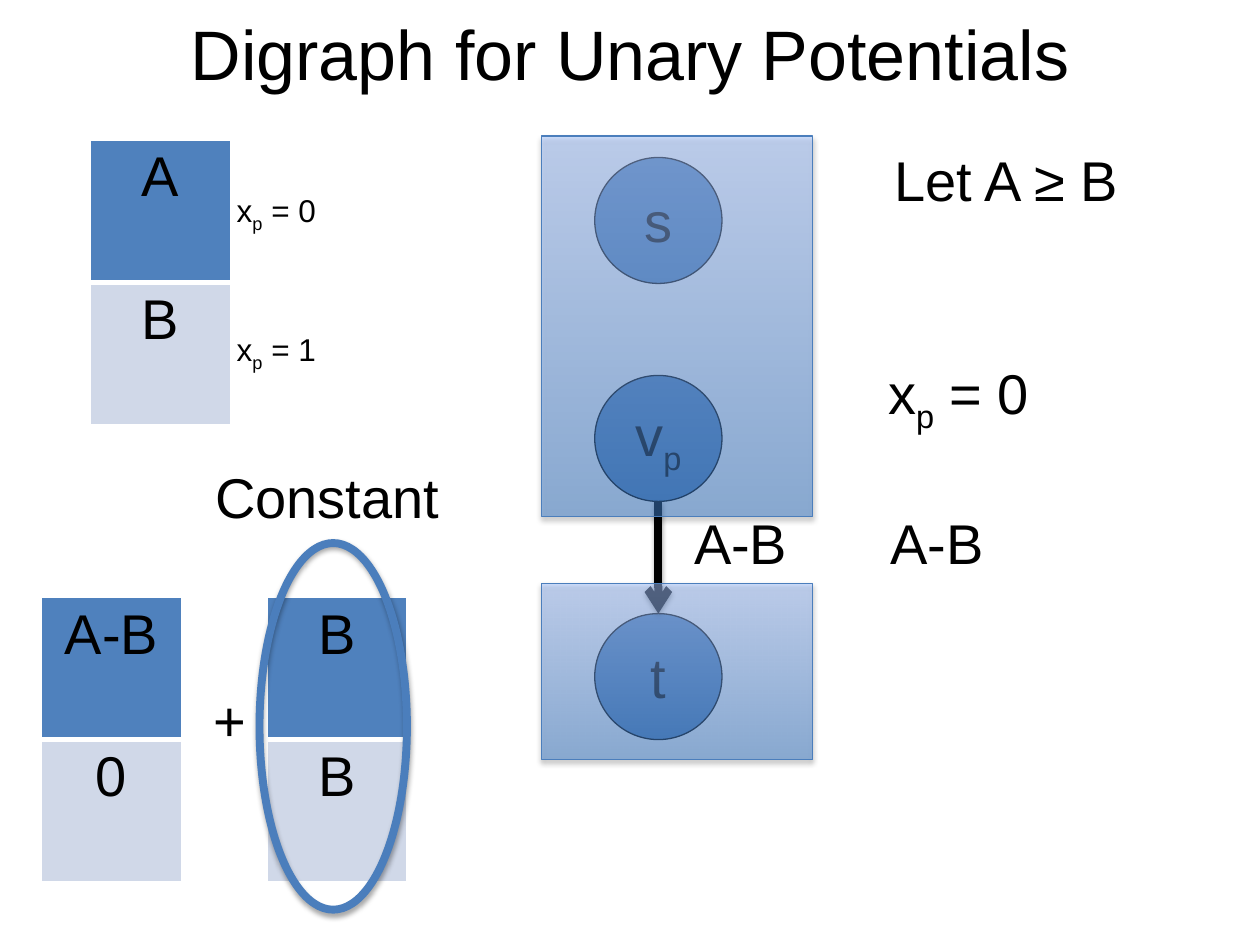
import lxml.etree
import pptx
import pptx.dml.color
import pptx.enum.dml
import pptx.enum.shapes
import pptx.enum.text
import pptx.oxml
import pptx.oxml.ns
import pptx.util

RGBColor = pptx.dml.color.RGBColor
BLACK = RGBColor(0x00, 0x00, 0x00)
WHITE = RGBColor(0xFF, 0xFF, 0xFF)
BLUE = RGBColor(0x4F, 0x81, 0xBD)
PALE = RGBColor(0xD0, 0xD8, 0xE8)
OUTLINE = RGBColor(0x4B, 0x7E, 0xBC)
VEIL_LOW = RGBColor(0x3F, 0x80, 0xCE)
VEIL_HIGH = RGBColor(0xA4, 0xC4, 0xFF)

SHAPES = pptx.enum.shapes.MSO_SHAPE
ALIGN = pptx.enum.text.PP_ALIGN
ANCHOR = pptx.enum.text.MSO_ANCHOR
WIDTH, HEIGHT = pptx.util.Inches(10), pptx.util.Inches(7.5)
UNIT = WIDTH // 100
NAMESPACE = pptx.oxml.ns.nsdecls("a")


def grid(*values):
    return [round(value * UNIT) for value in values]


def write(frame, text, size, align=ALIGN.LEFT):
    para = frame.paragraphs[0]
    para.alignment = align
    for index, part in enumerate(text.split("_")):
        span = para.add_run()
        span.text = part
        formats = {"name": "Arial", "size": pptx.util.Pt(size), "bold": False}
        for name, value in formats.items():
            setattr(span.font, name, value)
        span.font.color.rgb = BLACK
        if index % 2:
            span.font._element.set("baseline", "-25000")


def add_label(page, text, left, top, width, height=6.4, size=32, wrap=True):
    box = page.shapes.add_textbox(*grid(left, top, width, height))
    box.text_frame.word_wrap = wrap
    write(box.text_frame, text, size)


def set_line(shape, color, width):
    shape.line.color.rgb = color
    shape.line.width = pptx.util.Pt(width)


def add_shadow(shape, alpha=35, distance=1.8):
    shape._element.spPr.append(pptx.oxml.parse_xml(
        f'<a:effectLst {NAMESPACE}><a:outerShdw blurRad="{pptx.util.Pt(3.1)}" '
        f'dist="{pptx.util.Pt(distance)}" dir="5400000" rotWithShape="0">'
        f'<a:srgbClr val="{BLACK}"><a:alpha val="{alpha * 1000}"/></a:srgbClr>'
        '</a:outerShdw></a:effectLst>'))


def set_borders(cell, bottom):
    widths = {"lnL": 1, "lnR": 1, "lnT": 1, "lnB": bottom}
    for index, (side, width) in enumerate(widths.items()):
        cell._tc.get_or_add_tcPr().insert(index, pptx.oxml.parse_xml(
            f'<a:{side} {NAMESPACE} w="{pptx.util.Pt(width)}"><a:solidFill>'
            f'<a:srgbClr val="{WHITE}"/></a:solidFill></a:{side}>'))


def add_potential(page, left, top, texts):
    frame = page.shapes.add_table(2, 1, *grid(left, top, 11.1, 22.6))
    table = frame.table
    table.first_row = table.horz_banding = False
    for row, (text, color, bottom) in enumerate(zip(texts, (BLUE, PALE), (3, 1))):
        cell = table.cell(row, 0)
        cell.fill.solid()
        cell.fill.fore_color.rgb = color
        set_borders(cell, bottom)
        write(cell.text_frame, text, 32, ALIGN.CENTER)


def add_node(page, text, left, top):
    node = page.shapes.add_shape(SHAPES.OVAL, *grid(left, top, 10.1, 10))
    node.shadow.inherit = False
    node.fill.solid()
    node.fill.fore_color.rgb = BLUE
    set_line(node, BLACK, 0.75)
    node.text_frame.word_wrap = False
    node.text_frame.vertical_anchor = ANCHOR.MIDDLE
    write(node.text_frame, text, 32, ALIGN.CENTER)
    return node


def add_veil(page, left, top, width, height):
    veil = page.shapes.add_shape(SHAPES.RECTANGLE, *grid(left, top, width, height))
    veil.fill.gradient()
    veil.fill.gradient_angle = 90
    for stop, color in zip(veil.fill.gradient_stops, (VEIL_LOW, VEIL_HIGH)):
        stop.color.rgb = color
    for color in veil._element.spPr.iter(pptx.oxml.ns.qn("a:srgbClr")):
        lxml.etree.SubElement(color, pptx.oxml.ns.qn("a:alpha"), val="50000")
    set_line(veil, OUTLINE, 0.75)
    add_shadow(veil)


def add_title(page, text, left, top, width, height):
    title = page.shapes.title
    title.left, title.top, title.width, title.height = grid(left, top, width, height)
    title.text_frame.vertical_anchor = ANCHOR.MIDDLE
    write(title.text_frame, text, 40, ALIGN.CENTER)


def add_digraph(page, left, top, width):
    node_left = left + 4.2
    pixel, source, sink = [
        add_node(page, text, node_left, top + drop)
        for text, drop in (("v_p", 19), ("s", 1.7), ("t", 37.9))]
    middle = pixel.left + pixel.width // 2
    edge = page.shapes.add_connector(
        pptx.enum.shapes.MSO_CONNECTOR.STRAIGHT,
        middle, pixel.top + pixel.height, middle, sink.top)
    edge.end_connect(sink, 0)
    set_line(edge, BLACK, 4.5)
    lxml.etree.SubElement(
        edge.line._get_or_add_ln(), pptx.oxml.ns.qn("a:tailEnd"), type="arrow")
    add_shadow(edge, alpha=38, distance=1.6)
    add_label(page, "A-B", left + 11.1, top + 29.1, 26.8)
    add_veil(page, left, top + 35.5, width, 14)
    add_veil(page, left, top, width, 30.2)


def add_unary(page, left, top):
    add_potential(page, left, top, ("A", "B"))
    for row, text in enumerate(("x_p_ = 0", "x_p_ = 1")):
        add_label(page, text, left + 10.6, top + 3.6 + 11 * row, 8.5, 4, 18, False)


def add_decomposition(page, left, top):
    add_potential(page, left, top, ("A-B", "0"))
    add_potential(page, left + 17.9, top, ("B", "B"))
    add_label(page, "+", left + 12.7, top + 6.5, 4.6, wrap=False)
    ring = page.shapes.add_shape(
        SHAPES.OVAL, *grid(left + 17.3, top - 4.3, 11.7, 29.1))
    ring.fill.background()
    set_line(ring, OUTLINE, 4.5)
    add_shadow(ring)
    add_label(page, "Constant", left + 12.8, top - 11.2, 26.8)


def add_cut_cost(page, left, top):
    add_label(page, "Let A ≥ B", left + 0.5, top, 26.8)
    add_label(page, "x_p_ = 0", left, top + 16.9, 26.8)
    add_label(page, "A-B", left + 0.2, top + 28.8, 29)


def main():
    deck = pptx.Presentation()
    deck.slide_width, deck.slide_height = WIDTH, HEIGHT
    page = deck.slides.add_slide(deck.slide_layouts[5])
    add_title(page, "Digraph for Unary Potentials", 5, 0.6, 90, 7.1)
    add_unary(page, 7.2, 11.1)
    add_decomposition(page, 3.3, 47.4)
    add_digraph(page, 43, 10.8, 21.5)
    add_cut_cost(page, 69.5, 11.1)
    deck.save("out.pptx")


if __name__ == "__main__":
    main()
